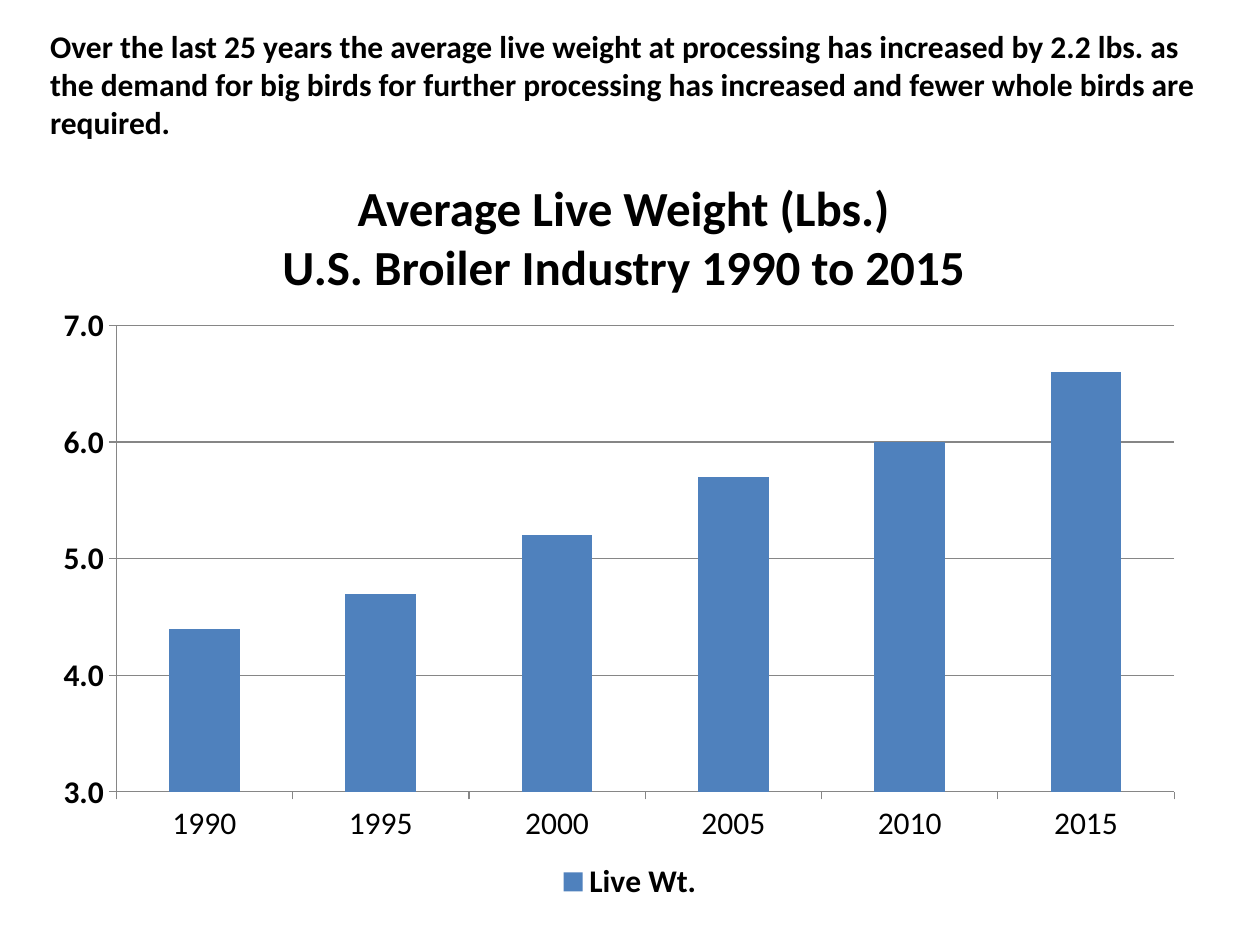
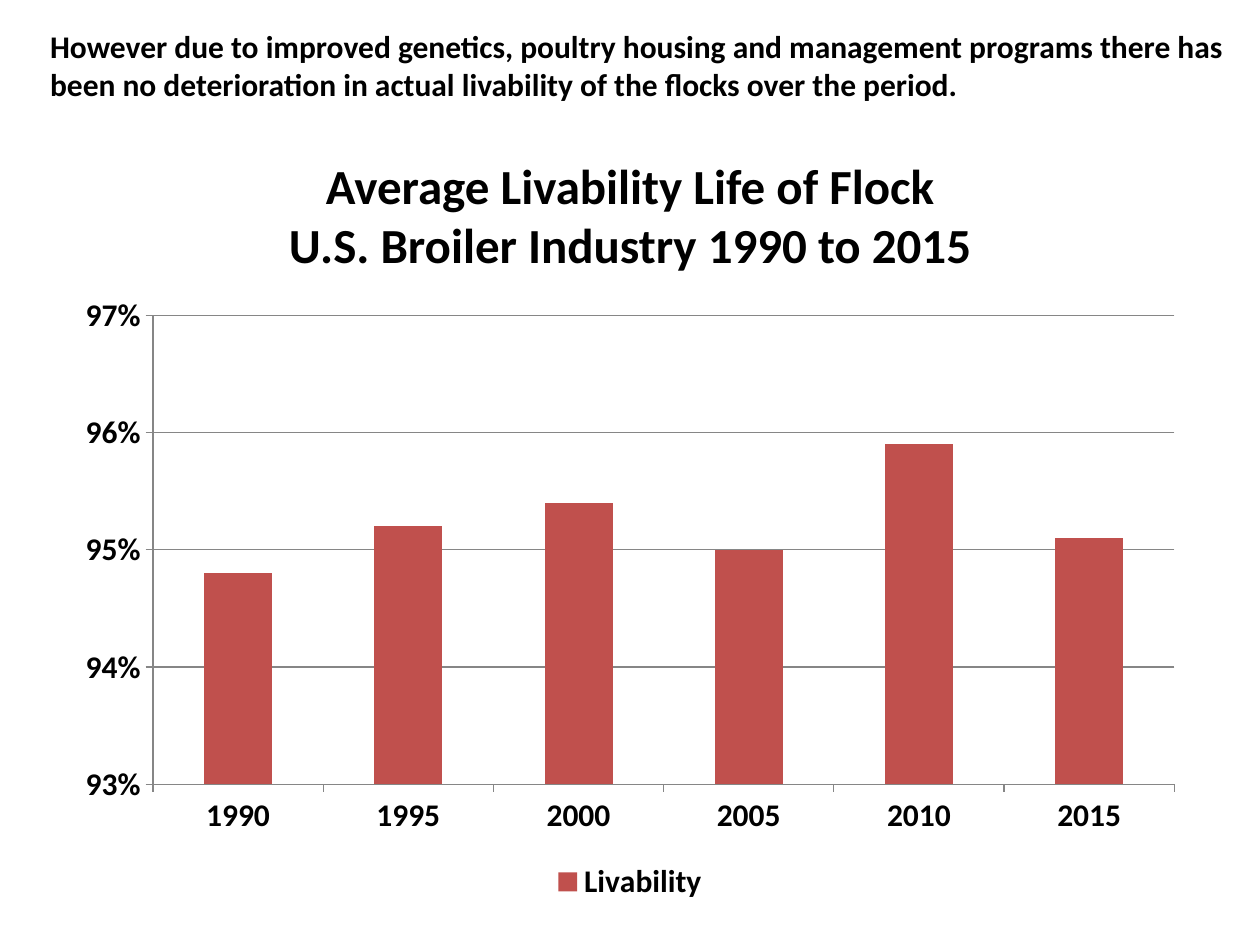
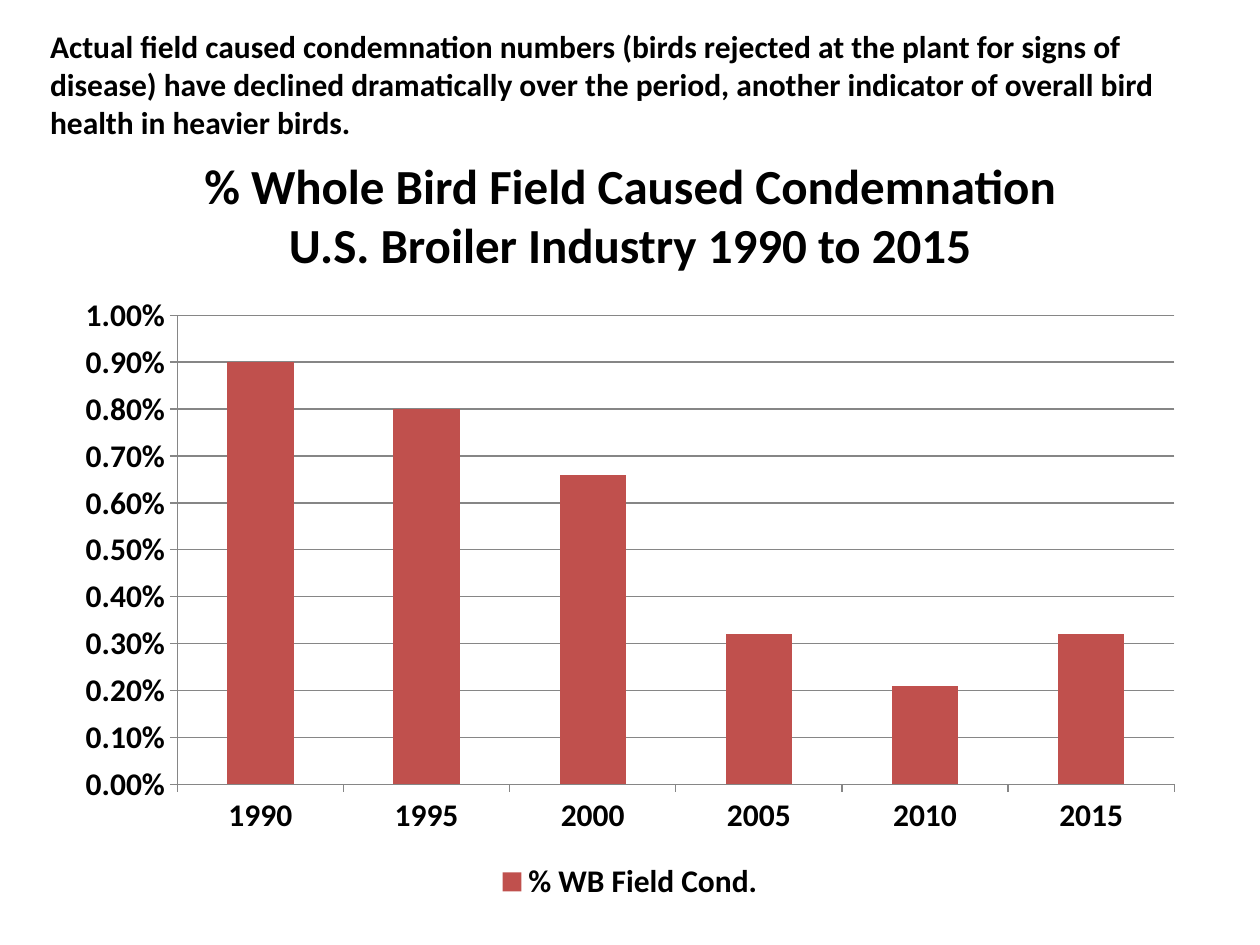
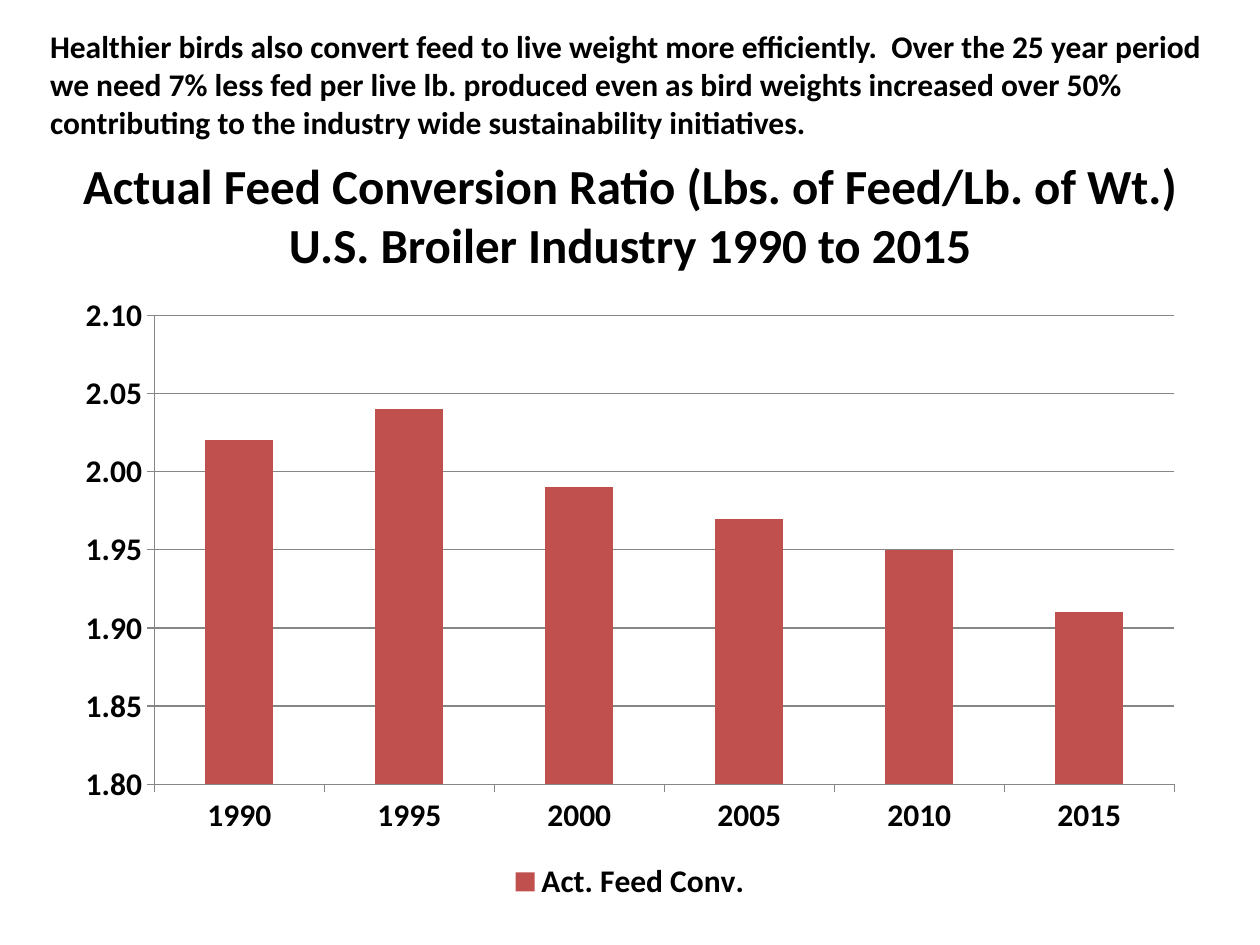
from dataclasses import dataclass
from typing import Optional

from lxml import etree
from pptx import Presentation
from pptx.chart.axis import CategoryAxis, ValueAxis
from pptx.chart.chart import Chart
from pptx.chart.data import CategoryChartData
from pptx.dml.color import RGBColor
from pptx.enum import chart as charts, text
from pptx.oxml.ns import qn
from pptx.slide import Slide
from pptx.text.text import Font
from pptx.util import Cm, Pt

# Shared look
COLORS = {"text": "000000", "grid": "868686", "blue": "4F81BD", "red": "C0504D"}
FONT = "Calibri"
BODY_SIZE = 18
TITLE_SIZE = 28
TITLE_ONLY = 5
YEARS = ("1990", "1995", "2000", "2005", "2010", "2015")
SUBTITLE = "U.S. Broiler Industry 1990 to 2015"


@dataclass(frozen=True)
class Scale:
    low: float
    high: float
    step: float
    number_format: str


@dataclass(frozen=True)
class Metric:
    message: str
    heading: str
    series: str
    values: tuple[float, ...]
    scale: Scale
    color: str = "red"
    bold_years: bool = True
    title_left: float = 1.27
    title_top: float = 2.74
    message_height: float = 2.57
    plot_area: Optional[tuple[float, float, float, float]] = None


METRICS = (
    Metric(
        "Over the last 25 years the average live weight at processing has increased by "
        "2.2 lbs. as the demand for big birds for further processing has increased and "
        "fewer whole birds are required.",
        "Average Live Weight (Lbs.)",
        "Live Wt.",
        (4.4, 4.7, 5.2, 5.7, 6.0, 6.6),
        Scale(3, 7, 1, "#,##0.0"),
        color="blue",
        bold_years=False,
        title_left=1.14,
        title_top=3.18,
        plot_area=(0.047, 0.067, 0.933, 0.748),
    ),
    Metric(
        "However due to improved genetics, poultry housing and management programs there "
        "has been no deterioration in actual livability of the flocks over the period.",
        "Average Livability Life of Flock",
        "Livability",
        (0.948, 0.952, 0.954, 0.95, 0.959, 0.951),
        Scale(0.93, 0.97, 0.01, "0%"),
        message_height=1.8,
    ),
    Metric(
        "Actual field caused condemnation numbers (birds rejected at the plant for signs "
        "of disease) have declined dramatically over the period, another indicator of "
        "overall bird health in heavier birds.",
        "% Whole Bird Field Caused Condemnation",
        "% WB Field Cond.",
        (0.009, 0.008, 0.0066, 0.0032, 0.0021, 0.0032),
        Scale(0, 0.01, 0.001, "0.00%"),
    ),
    Metric(
        "Healthier birds also convert feed to live weight more efficiently.  Over the 25 "
        "year period we need 7% less fed per live lb. produced even as bird weights "
        "increased over 50% contributing to the industry wide sustainability initiatives.",
        "Actual Feed Conversion Ratio (Lbs. of Feed/Lb. of Wt.)",
        "Act. Feed Conv.",
        (2.02, 2.04, 1.99, 1.97, 1.95, 1.91),
        Scale(1.8, 2.1, 0.05, "#,##0.00"),
    ),
)


def color(name: str) -> RGBColor:
    return RGBColor.from_string(COLORS[name])


def style_font(font: Font, size: int = BODY_SIZE, bold: bool = True) -> None:
    font.name = FONT
    font.size = Pt(size)
    font.bold = bold
    font.color.rgb = color("text")


# Title and message
def set_title(page: Slide, metric: Metric) -> None:
    title = page.shapes.title
    title.left, title.top = Cm(metric.title_left), Cm(metric.title_top)
    title.width, title.height = Cm(22.86), Cm(3.18)
    frame = title.text_frame
    frame.auto_size = text.MSO_AUTO_SIZE.NONE
    frame.vertical_anchor = text.MSO_ANCHOR.MIDDLE
    para = frame.paragraphs[0]
    para.alignment = text.PP_ALIGN.CENTER
    for line in (metric.heading, SUBTITLE):
        if para.runs:
            para.add_line_break()
        span = para.add_run()
        span.text = line
        style_font(span.font, TITLE_SIZE)


def add_message(page: Slide, metric: Metric) -> None:
    box = page.shapes.add_textbox(Cm(0.76), Cm(0.43), Cm(24.23), Cm(metric.message_height))
    frame = box.text_frame
    frame.word_wrap = True
    frame.auto_size = text.MSO_AUTO_SIZE.SHAPE_TO_FIT_TEXT
    span = frame.paragraphs[0].add_run()
    span.text = metric.message
    style_font(span.font)


# Chart
def style_axis(axis: CategoryAxis | ValueAxis, bold: bool) -> None:
    axis.major_tick_mark = charts.XL_TICK_MARK.OUTSIDE
    axis.minor_tick_mark = charts.XL_TICK_MARK.NONE
    axis.format.line.color.rgb = color("grid")
    axis.format.line.width = Pt(0.75)
    style_font(axis.tick_labels.font, bold=bold)


def place_plot(chart: Chart, area: tuple[float, float, float, float]) -> None:
    plot_area = chart.element.find(".//" + qn("c:plotArea"))
    for old in plot_area.findall(qn("c:layout")):
        plot_area.remove(old)
    layout = etree.Element(qn("c:layout"))
    manual = etree.SubElement(layout, qn("c:manualLayout"))
    settings = [("layoutTarget", "inner"), ("xMode", "edge"), ("yMode", "edge")]
    settings += zip("xywh", area)
    for tag, value in settings:
        etree.SubElement(manual, qn(f"c:{tag}")).set("val", str(value))
    plot_area.insert(0, layout)


def add_metric_chart(page: Slide, metric: Metric) -> None:
    scale = metric.scale
    data = CategoryChartData(number_format=scale.number_format)
    data.categories = YEARS
    data.add_series(metric.series, metric.values)
    chart = page.shapes.add_chart(
        charts.XL_CHART_TYPE.COLUMN_CLUSTERED,
        Cm(1.27), Cm(5.72), Cm(22.86), Cm(12.57), data,
    ).chart
    chart.has_title = False
    style_font(chart.font, bold=False)

    style_axis(chart.category_axis, metric.bold_years)
    values = chart.value_axis
    style_axis(values, True)
    values.minimum_scale, values.maximum_scale = scale.low, scale.high
    values.major_unit = scale.step
    values.tick_labels.number_format = scale.number_format
    values.tick_labels.number_format_is_linked = False
    values.has_major_gridlines = True
    values.major_gridlines.format.line.color.rgb = color("grid")
    values.major_gridlines.format.line.width = Pt(0.75)

    plot = chart.plots[0]
    plot.gap_width = 150
    plot.vary_by_categories = False
    fill = plot.series[0].format.fill
    fill.solid()
    fill.fore_color.rgb = color(metric.color)

    chart.has_legend = True
    chart.legend.position = charts.XL_LEGEND_POSITION.BOTTOM
    chart.legend.include_in_layout = False
    style_font(chart.legend.font)
    if metric.plot_area:
        place_plot(chart, metric.plot_area)


def main() -> None:
    deck = Presentation()
    deck.slide_width, deck.slide_height = Cm(25.4), Cm(19.05)
    for metric in METRICS:
        page = deck.slides.add_slide(deck.slide_layouts[TITLE_ONLY])
        set_title(page, metric)
        add_metric_chart(page, metric)
        add_message(page, metric)
    deck.save("out.pptx")


if __name__ == "__main__":
    main()
